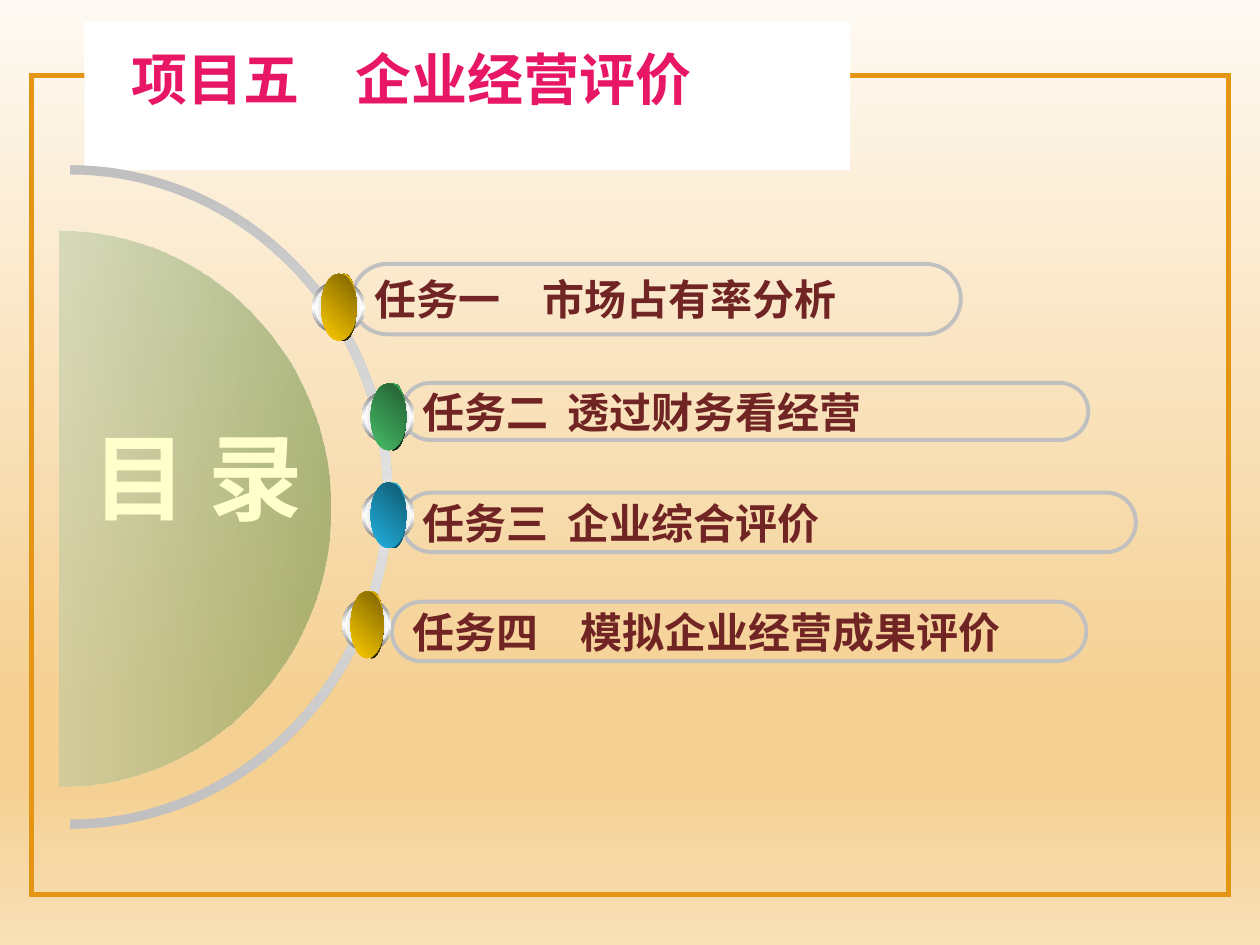
from lxml.etree import SubElement as Sub
from pptx import Presentation
from pptx.dml.color import RGBColor
from pptx.enum.shapes import MSO_SHAPE as Kind
from pptx.enum.text import MSO_ANCHOR as Anchor, PP_ALIGN as Align
from pptx.oxml.ns import qn
from pptx.util import Cm, Pt

WHITE = RGBColor(0xFF, 0xFF, 0xFF)
BLACK = RGBColor(0x00, 0x00, 0x00)
IVORY = RGBColor(0xFE, 0xFA, 0xF3)
SAND = RGBColor(0xF5, 0xD0, 0x93)
CREAM = RGBColor(0xF9, 0xE0, 0xB7)
ORANGE = RGBColor(0xE4, 0x95, 0x14)
PINK = RGBColor(0xE8, 0x17, 0x66)
YELLOW = RGBColor(0xFF, 0xFF, 0xCC)
MAROON = RGBColor(0x70, 0x24, 0x24)
GREY = RGBColor(0xC0, 0xC0, 0xC0)
PALE = RGBColor(0xE2, 0xE2, 0xE2)
STEEL = RGBColor(0x76, 0x76, 0x76)
SILVER = RGBColor(0xA2, 0xA2, 0xA2)
OLIVE = RGBColor(0x6E, 0x93, 0x49)
SAGE = RGBColor(0xB6, 0xC9, 0xA4)
GOLD = RGBColor(0xFF, 0xCC, 0x00)
BRONZE = RGBColor(0x7C, 0x63, 0x00)
GREEN = RGBColor(0x48, 0xBE, 0x67)
FOREST = RGBColor(0x23, 0x5C, 0x32)
BLUE = RGBColor(0x21, 0xB3, 0xE1)
NAVY = RGBColor(0x0F, 0x53, 0x68)
TEAL = RGBColor(0x10, 0x57, 0x6D)

SANS_JP, SANS_SC, ARIAL = "Noto Sans CJK JP", "Noto Sans CJK SC", "Arial"

GILT = ([(0, BLACK), (100, GOLD)], 315, [(0, GOLD), (100, BRONZE)])
LEAF = ([(0, BLACK), (100, GREEN)], 315, [(0, GREEN), (100, FOREST)])
SEA = ([(0, BLUE), (100, NAVY)], 90, [(0, BLUE), (100, TEAL)])

TASKS = [
    ("任务一　市场占有率分析", (7.1, 5.32, 12.27, 1.42), (6.29, 5.66, 1.07, 1.07), GILT),
    ("任务二  透过财务看经营", (8.1, 7.72, 13.84, 1.15), (7.29, 7.87, 1.07, 1.07), LEAF),
    ("任务三  企业综合评价", (8.1, 9.93, 14.8, 1.2), (7.29, 9.86, 1.07, 1.05), SEA),
    ("任务四　模拟企业经营成果评价", (7.9, 12.13, 14, 1.2), (6.9, 12.06, 0.99, 1.07), GILT),
]


def blend(fill, root, stops, angle):
    """Fill with a linear gradient of (place, colour[, opacity]) stops."""
    fill.gradient()
    grad = next(root.iter(qn("a:gradFill")))
    for child in list(grad):
        grad.remove(child)
    group = Sub(grad, qn("a:gsLst"))
    for place, tone, *alpha in stops:
        stop = Sub(group, qn("a:gs"), pos=str(place * 1000))
        color = Sub(stop, qn("a:srgbClr"), val=str(tone))
        for value in alpha:
            Sub(color, qn("a:alpha"), val=str(value * 1000))
    Sub(grad, qn("a:lin"), ang=str(angle * 60000), scaled="0")


def add_form(shapes, kind, box, fill=None, line=None, width=0):
    """Add a preset shape with a plain fill and line, or none."""
    form = shapes.add_shape(kind, *map(Cm, box))
    form.shadow.inherit = False
    form.fill.background()
    form.line.fill.background()
    if fill is not None:
        form.fill.solid()
        form.fill.fore_color.rgb = fill
    if line is not None:
        form.line.color.rgb = line
        form.line.width = Pt(width)
    return form


def put_text(frame, text, size, face, tone, align, east):
    """Write one bold line of text into a frame."""
    frame.word_wrap = False
    frame.text = text
    para = frame.paragraphs[0]
    para.alignment = align
    for run in para.runs:
        run.font.size, run.font.name, run.font.bold = Pt(size), face, True
        run.font.color.rgb = tone
        Sub(run.font._element, qn("a:ea"), typeface=east)
    return para


def add_label(shapes, box, text, size, face, tone):
    """Add a centred text box."""
    frame = shapes.add_textbox(*map(Cm, box)).text_frame
    return put_text(frame, text, size, face, tone, Align.CENTER, face)


def add_frame(shapes, box):
    """Add the orange border with square corners."""
    form = add_form(shapes, Kind.RECTANGLE, box, None, ORANGE, 3)
    Sub(form.line._get_or_add_ln(), qn("a:miter"), lim="800000")


def add_title(shapes, box):
    """Add the white banner and its title."""
    left, top, width, height = box
    add_form(shapes, Kind.RECTANGLE, box, WHITE)
    para = add_label(shapes, (left + 0.2, top + 0.5, 12.8, 1.6),
                     "项目五　企业经营评价", 32, SANS_JP, PINK)
    para.line_spacing = 0.9


def half(hub, radii):
    """Return the Bezier points down the right half of an ellipse."""
    (x, y), (rx, ry), k = hub, radii, 0.55
    units = [(0, -1), (k, -1), (1, -k), (1, 0), (1, k), (k, 1), (0, 1)]
    return [(Cm(x + u * rx), Cm(y + v * ry)) for u, v in units]


def add_curve(shapes, points, stops, angle):
    """Add an outline of curved halves with a gradient fill."""
    pen = shapes.build_freeform(*points[0])
    pen.add_line_segments(points[1:], close=True)
    form = pen.convert_to_shape()
    lines = list(form._element.iter(qn("a:lnTo")))
    for start in range(0, len(lines), 7):
        for first in (start, start + 3):
            trio = lines[first:first + 3]
            bend = trio[0].makeelement(qn("a:cubicBezTo"))
            trio[0].addprevious(bend)
            for line in trio:
                bend.append(line[0])
                line.getparent().remove(line)
    form.shadow.inherit = False
    form.line.fill.background()
    blend(form.fill, form._element, stops, angle)


def add_dial(shapes, box):
    """Add the ring, the half disc and the contents label."""
    left, top, width, height = box
    hub = (left, top + height / 2)
    outer = half(hub, (width, height / 2))
    inner = half(hub, (width - 0.18, height / 2 - 0.19))
    add_curve(shapes, outer + inner[::-1], [(0, GREY), (50, PALE), (100, GREY)], 90)
    disc = half((left - 0.2, hub[1] + 0.23), (5.45, 5.6))
    add_curve(shapes, disc, [(0, OLIVE, 56), (100, SAGE, 52)], 180)
    add_label(shapes, (left + 0.19, top + 5, 4.78, 2.18), "目 录", 54, SANS_SC, YELLOW)


def add_bead(shapes, box, tint):
    """Add a grouped bead made of a metal ring and a coloured core."""
    left, top, width, height = box
    edge, angle, core = tint
    parts = [
        ((0, 0, 1, 1), [(0, STEEL), (50, WHITE), (100, STEEL)], 90),
        ((0.06, 0.06, 0.88, 0.88), [(0, WHITE), (50, SILVER), (100, WHITE)], 0),
        ((0.36, -0.13, 0.48, 1.26), edge, angle),
        ((0.17, -0.13, 0.67, 1.26), core, 315),
    ]
    group = shapes.add_group_shape()
    for (x, y, w, h), stops, turn in parts:
        place = (left + x * width, top + y * height, w * width, h * height)
        form = add_form(group.shapes, Kind.OVAL, place)
        blend(form.fill, form._element, stops, turn)


def add_task(shapes, box, text):
    """Add a rounded outline with a task name."""
    pill = add_form(shapes, Kind.ROUNDED_RECTANGLE, box, None, GREY, 2.25)
    pill.adjustments[0] = 0.5
    pill.text_frame.vertical_anchor = Anchor.MIDDLE
    put_text(pill.text_frame, text, 24, ARIAL, MAROON, Align.LEFT, SANS_SC)


def main():
    """Build and save the contents slide."""
    deck = Presentation()
    deck.slide_width, deck.slide_height = Cm(25.4), Cm(19.05)
    slide = deck.slides.add_slide(deck.slide_layouts[6])
    shapes = slide.shapes
    blend(slide.background.fill, slide._element,
          [(0, IVORY), (74, SAND), (83, SAND), (100, CREAM)], 90)
    add_frame(shapes, (0.64, 1.52, 24.13, 16.51))
    add_title(shapes, (1.7, 0.43, 15.44, 3))
    add_dial(shapes, (1.41, 3.33, 6.5, 13.38))
    for text, box, spot, tint in TASKS:
        add_task(shapes, box, text)
        add_bead(shapes, spot, tint)
    deck.save("out.pptx")


if __name__ == "__main__":
    main()
